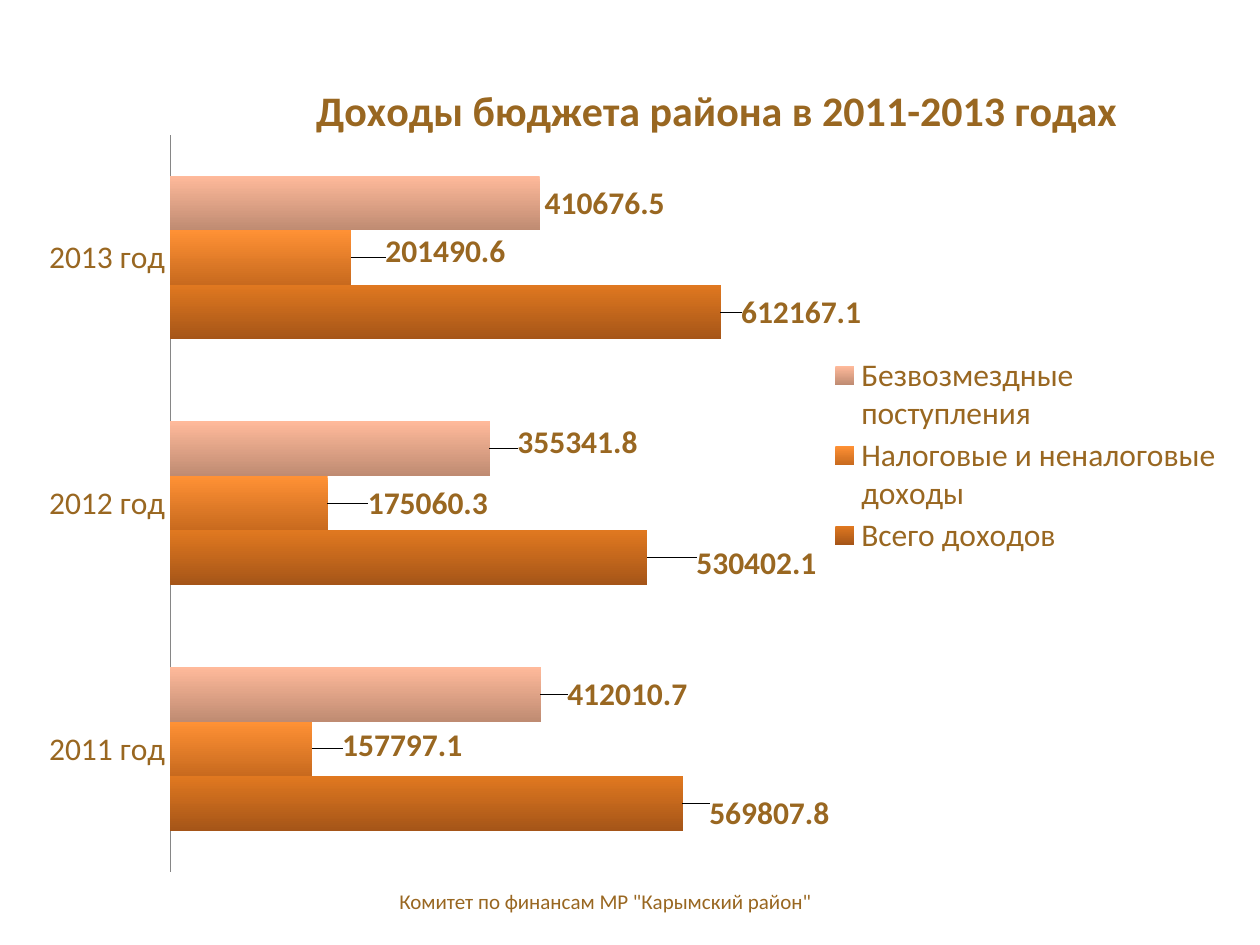
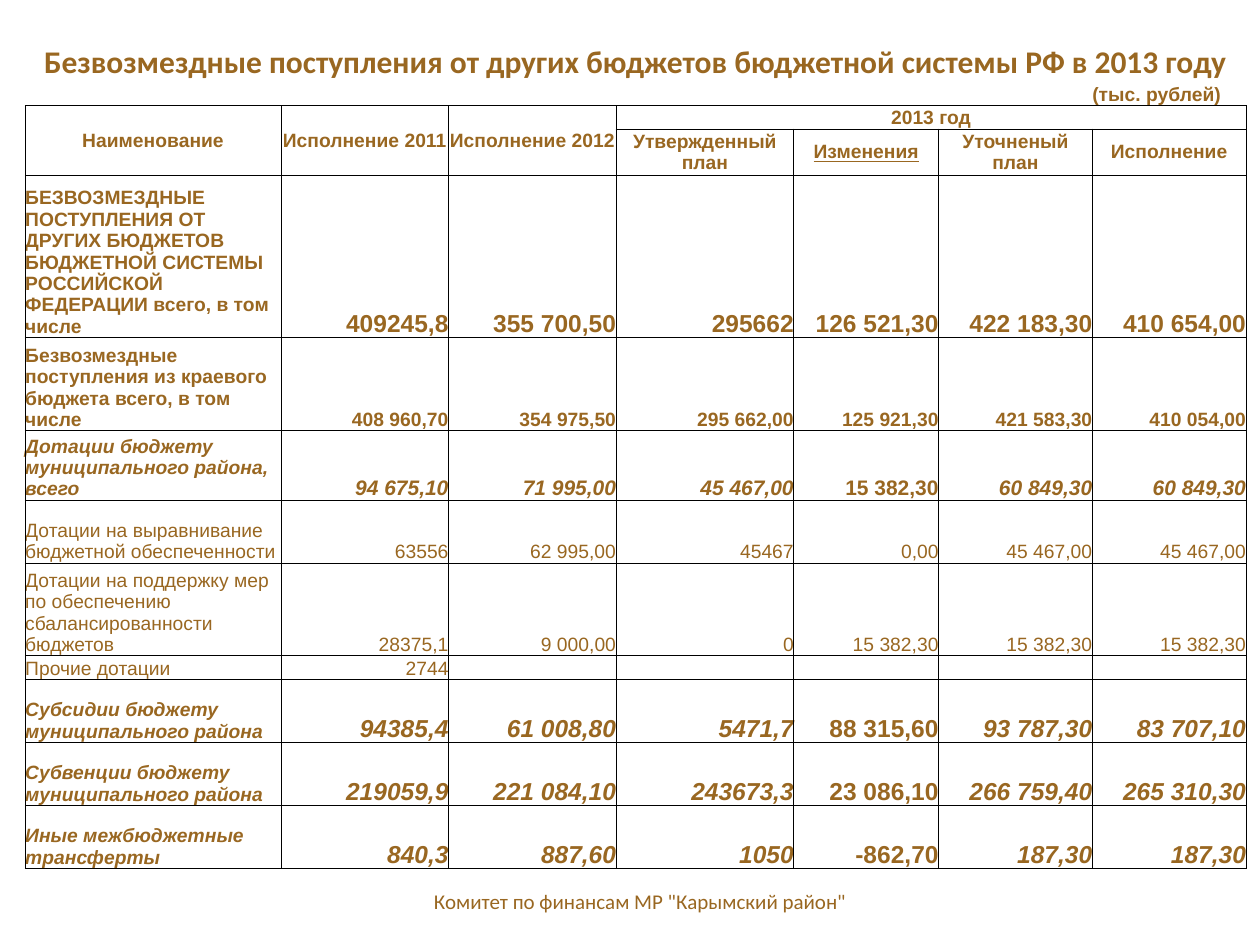
import pptx
import pptx.chart.data
import pptx.dml.color
import pptx.enum.chart
import pptx.enum.dml
import pptx.enum.text
import pptx.oxml
import pptx.oxml.ns
import pptx.util
from lxml import etree

Inches = pptx.util.Inches
Pt = pptx.util.Pt
qn = pptx.oxml.ns.qn
ALIGN = pptx.enum.text.PP_ALIGN
ANCHOR = pptx.enum.text.MSO_ANCHOR

# Shared look
BROWN = "996721"
BLACK = "000000"
AXIS_GRAY = "868686"
HEADING_FONT = "Calibri"
TABLE_FONT = "Arial"
FOOTER = 'Комитет по финансам МР "Карымский район"'
NO_TABLE_STYLE = "{2D5ABB26-0587-4C30-8999-92F81FD0307C}"

# Income chart: name, gradient colours, values, label shifts in inches
YEARS = ["2011 год", "2012 год", "2013 год"]
INCOME_SERIES = [
    ("Всего доходов", ("E07820", "A55518"), (569807.8, 530402.1, 612167.1),
     ((0.17, 0.08), (0.35, 0.04), (0.12, 0))),
    ("Налоговые и неналоговые доходы", ("FF9135", "C86A1E"), (157797.1, 175060.3, 201490.6),
     ((0.2, -0.03), (0.28, 0), (0.23, -0.05))),
    ("Безвозмездные поступления", ("FFBA9B", "BF8B72"), (412010.7, 355341.8, 410676.5),
     ((0.17, 0), (0.18, -0.05), (0, 0))),
]

# Transfers table
COLUMN_WIDTHS = [2.03, 1.33, 1.33, 1.41, 1.15, 1.22, 1.22]
ROW_HEIGHTS = [0.44, 0.19, 0.18, 0.37, 1.28, 0.74, 0.55, 0.5, 0.73, 0.19, 0.5, 0.5, 0.5]
TABLE_TITLE = "Безвозмездные поступления от других бюджетов бюджетной системы РФ в 2013 году"
MAIN_HEADERS = ["Наименование", "Исполнение 2011", "Исполнение 2012", "2013 год"]
YEAR_HEADERS = ["Утвержденный план", "Изменения", "Уточненый план", "Исполнение"]
FIRST_DATA_ROW = 4
CHANGES_COLUMN = 4
# Value size, bold, italic, then the cells
TRANSFERS = [
    (14, True, False,
     ["БЕЗВОЗМЕЗДНЫЕ ПОСТУПЛЕНИЯ ОТ ДРУГИХ БЮДЖЕТОВ БЮДЖЕТНОЙ СИСТЕМЫ "
      "РОССИЙСКОЙ ФЕДЕРАЦИИ всего, в том числе",
      "409245,8", "355 700,50", "295662", "126 521,30", "422 183,30", "410 654,00"]),
    (11, True, False,
     ["Безвозмездные поступления из краевого бюджета всего, в том числе",
      "408 960,70", "354 975,50", "295 662,00", "125 921,30", "421 583,30", "410 054,00"]),
    (12, True, True,
     ["Дотации бюджету муниципального района, всего",
      "94 675,10", "71 995,00", "45 467,00", "15 382,30", "60 849,30", "60 849,30"]),
    (11, False, False,
     ["Дотации на выравнивание бюджетной обеспеченности",
      "63556", "62 995,00", "45467", "0,00", "45 467,00", "45 467,00"]),
    (11, False, False,
     ["Дотации на поддержку мер по обеспечению сбалансированности бюджетов",
      "28375,1", "9 000,00", "0", "15 382,30", "15 382,30", "15 382,30"]),
    (11, False, False, ["Прочие дотации", "2744", "", "", "", "", ""]),
    (14, True, True,
     ["Субсидии бюджету муниципального района",
      "94385,4", "61 008,80", "5471,7", "88 315,60", "93 787,30", "83 707,10"]),
    (14, True, True,
     ["Субвенции бюджету муниципального района",
      "219059,9", "221 084,10", "243673,3", "23 086,10", "266 759,40", "265 310,30"]),
    (14, True, True,
     ["Иные межбюджетные трансферты",
      "840,3", "887,60", "1050", "-862,70", "187,30", "187,30"]),
]


def rgb(value):
    return pptx.dml.color.RGBColor.from_string(value)


def format_font(font, size, name=HEADING_FONT, color=BROWN, bold=False, italic=False,
                underline=False):
    font.size, font.name = Pt(size), name
    font.bold, font.italic, font.underline = bold, italic, underline
    font.color.rgb = rgb(color)


def write_text(frame, text, size=11, align=ALIGN.LEFT, **style):
    paragraph = frame.paragraphs[0]
    paragraph.alignment = align
    run = paragraph.add_run()
    run.text = text
    format_font(run.font, size, **style)


def add_footer(slide, left, width):
    box = slide.shapes.add_textbox(Inches(left), Inches(6.95), Inches(width), Inches(0.4))
    box.text_frame.word_wrap = True
    box.text_frame.vertical_anchor = ANCHOR.MIDDLE
    write_text(box.text_frame, FOOTER, size=12, align=ALIGN.CENTER)


# Chart slide
def place_in_chart(element, position, box, edge=True, **inches):
    """Give a chart part a manual layout, from lengths in inches."""
    for previous in element.findall(qn("c:layout")):
        element.remove(previous)
    layout = etree.Element(qn("c:layout"))
    manual = etree.SubElement(layout, qn("c:manualLayout"))
    if element.tag == qn("c:plotArea"):
        etree.SubElement(manual, qn("c:layoutTarget"), val="inner")
    if edge:
        for mode in ("xMode", "yMode"):
            etree.SubElement(manual, qn("c:" + mode), val="edge")
    whole = {"x": box[2], "w": box[2], "y": box[3], "h": box[3]}
    for key, length in inches.items():
        etree.SubElement(manual, qn("c:" + key), val=f"{length / whole[key]:.4f}")
    element.insert(position, layout)


def style_series(series, colors, shifts, box):
    series.invert_if_negative = False
    fill = series.format.fill
    fill.gradient()
    fill.gradient_angle = 270
    for stop, color in zip(fill.gradient_stops, colors):
        stop.color.rgb = rgb(color)

    labels = series.data_labels
    labels.show_value = True
    labels.number_format, labels.number_format_is_linked = "0.0", False
    labels.position = pptx.enum.chart.XL_LABEL_POSITION.OUTSIDE_END
    format_font(labels.font, 18, bold=True)
    for index, (x, y) in enumerate(shifts):
        if x or y:
            label = series.points[index].data_label
            label.position = pptx.enum.chart.XL_LABEL_POSITION.OUTSIDE_END
            format_font(label.font, 18, bold=True)
            element = series._element.xpath(f'.//c:dLbl[c:idx/@val="{index}"]')[0]
            place_in_chart(element, 1, box, edge=False, x=x, y=y)


def add_income_chart(slide, box):
    data = pptx.chart.data.CategoryChartData(number_format="0.0")
    data.categories = YEARS
    for name, _, values, _ in INCOME_SERIES:
        data.add_series(name, values)
    chart = slide.shapes.add_chart(pptx.enum.chart.XL_CHART_TYPE.BAR_CLUSTERED,
                                   *map(Inches, box), data).chart
    format_font(chart.font, 18)

    # Title, legend and plot area
    chart.has_title = True
    write_text(chart.chart_title.text_frame, "Доходы бюджета района в 2011-2013 годах",
               size=24, align=ALIGN.CENTER, bold=True)
    place_in_chart(chart.chart_title._element, 1, box, x=2.25, y=0.46)
    chart.has_legend = True
    chart.legend.position = pptx.enum.chart.XL_LEGEND_POSITION.RIGHT
    chart.legend.include_in_layout = False
    format_font(chart.legend.font, 18)
    place_in_chart(chart.legend._element, 1, box, x=6.39, y=2.67, w=3.1, h=1.63)
    plot_area = chart._chartSpace.xpath(".//c:plotArea")[0]
    place_in_chart(plot_area, 0, box, x=1.15, y=0.94, w=5, h=5.85)

    # Axes
    years = chart.category_axis
    years.major_tick_mark = pptx.enum.chart.XL_TICK_MARK.NONE
    years.format.line.color.rgb = rgb(AXIS_GRAY)
    format_font(years.tick_labels.font, 18)
    amounts = chart.value_axis
    amounts.visible = False
    amounts.has_major_gridlines = False
    amounts.minimum_scale, amounts.maximum_scale = 0, 700000

    # Bars
    plot = chart.plots[0]
    plot.gap_width, plot.overlap, plot.vary_by_categories = 150, 0, False
    for series, (_, colors, _, shifts) in zip(plot.series, INCOME_SERIES):
        style_series(series, colors, shifts, box)


# Table slide
def set_borders(cell, sides):
    properties = cell._tc.get_or_add_tcPr()
    for position, side in enumerate(("L", "R", "T", "B")):
        line = etree.Element(qn("a:ln" + side), w=str(Pt(0.5)))
        if side in sides:
            solid = etree.SubElement(line, qn("a:solidFill"))
            etree.SubElement(solid, qn("a:srgbClr"), val=BLACK)
        else:
            etree.SubElement(line, qn("a:noFill"))
        properties.insert(position, line)


def prepare_cell(cell, sides):
    cell.margin_left = cell.margin_right = cell.margin_top = cell.margin_bottom = 0
    cell.vertical_anchor = ANCHOR.BOTTOM
    cell.fill.background()
    set_borders(cell, sides)
    # Keeps empty cells as low as the text rows
    paragraph = cell.text_frame.paragraphs[0]._p
    etree.SubElement(paragraph, qn("a:endParaRPr"), sz="1100")


def write_header(cell, text, anchor=ANCHOR.MIDDLE, **style):
    cell.vertical_anchor = anchor
    write_text(cell.text_frame, text, align=ALIGN.CENTER, bold=True,
               **{"name": TABLE_FONT, **style})


def write_transfers(table):
    for row, (value_size, bold, italic, texts) in enumerate(TRANSFERS, FIRST_DATA_ROW):
        for column, text in enumerate(texts):
            if text:
                is_label = column == 0
                write_text(table.cell(row, column).text_frame, text, name=TABLE_FONT,
                           size=11 if is_label else value_size,
                           align=ALIGN.LEFT if is_label else ALIGN.RIGHT,
                           bold=bold, italic=italic and column != CHANGES_COLUMN)


def add_transfers_table(slide, left, top):
    frame = slide.shapes.add_table(len(ROW_HEIGHTS), len(COLUMN_WIDTHS), Inches(left), Inches(top),
                                   Inches(sum(COLUMN_WIDTHS)), Inches(sum(ROW_HEIGHTS)))
    table = frame.table
    table.first_row = table.horz_banding = False
    table._tbl.tblPr.find(qn("a:tableStyleId")).text = NO_TABLE_STYLE
    for column, width in zip(table.columns, COLUMN_WIDTHS):
        column.width = Inches(width)
    for index, (row, height) in enumerate(zip(table.rows, ROW_HEIGHTS)):
        row.height = Inches(height)
        sides = {0: "", 1: "B"}.get(index, "LRTB")
        for cell in row.cells:
            prepare_cell(cell, sides)

    # Title and unit
    table.cell(0, 0).merge(table.cell(0, 6))
    write_header(table.cell(0, 0), TABLE_TITLE, ANCHOR.BOTTOM, size=18, name=HEADING_FONT)
    write_text(table.cell(1, 6).text_frame, "(тыс. рублей)", name=TABLE_FONT, bold=True)

    # Headers
    for column in range(3):
        table.cell(2, column).merge(table.cell(3, column))
    table.cell(2, 3).merge(table.cell(2, 6))
    for column, text in enumerate(MAIN_HEADERS):
        write_header(table.cell(2, column), text, ANCHOR.BOTTOM if column == 3 else ANCHOR.MIDDLE)
    for column, text in enumerate(YEAR_HEADERS, 3):
        write_header(table.cell(3, column), text, underline=column == CHANGES_COLUMN)

    write_transfers(table)


def main():
    presentation = pptx.Presentation()
    presentation.slide_width, presentation.slide_height = Inches(10), Inches(7.5)
    blank = presentation.slide_layouts[6]

    income_slide = presentation.slides.add_slide(blank)
    add_footer(income_slide, 3.03, 3.55)
    add_income_chart(income_slide, (0.2, 0.13, 9.61, 6.93))

    transfers_slide = presentation.slides.add_slide(blank)
    add_footer(transfers_slide, 3.27, 3.62)
    add_transfers_table(transfers_slide, 0.2, 0.21)

    presentation.save("out.pptx")


if __name__ == "__main__":
    main()
